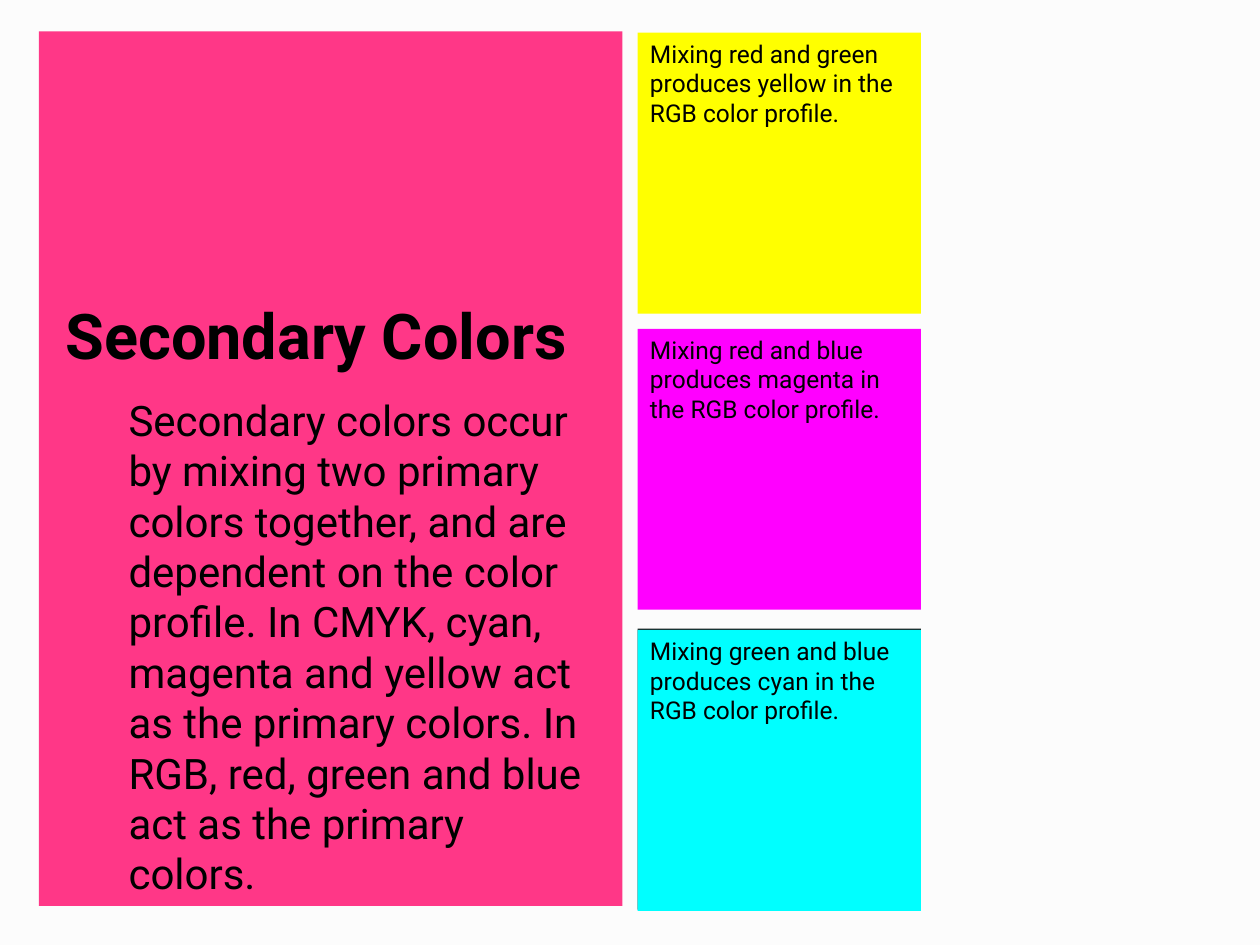
from pptx import Presentation
from pptx.dml.color import RGBColor
from pptx.enum.shapes import MSO_SHAPE
from pptx.enum.text import MSO_ANCHOR, MSO_AUTO_SIZE, PP_ALIGN
from pptx.oxml.ns import qn
from pptx.util import Inches, Pt
from lxml import etree

RECTANGLE = MSO_SHAPE.RECTANGLE
TOP, BOTTOM = MSO_ANCHOR.TOP, MSO_ANCHOR.BOTTOM
NO_AUTOFIT = MSO_AUTO_SIZE.NONE
LEFT = PP_ALIGN.LEFT

THEME = {
    "font": "Roboto", "title": 36, "body": 24, "caption": 14,
    "text": "000000", "background": "FCFCFC", "panel": "FF3787", "edge": "191919",
    "yellow": "FFFF00", "magenta": "FF00FF", "cyan": "00FFFF",
}

# One column of square tiles stands to the right of the panel.
TILE_LEFT, TILE_WIDTH, TILE_HEIGHT = 5.06, 2.25, 2.23
COPY_LEFT, COPY_WIDTH = 0.42, 4.39


def write(holder, text, size, bold=False, anchor=TOP):
    frame = holder.text_frame
    frame.text = text
    frame.word_wrap = True
    frame.auto_size = NO_AUTOFIT
    frame.vertical_anchor = anchor
    paragraph = frame.paragraphs[0]
    paragraph.alignment = LEFT
    paragraph.space_before = Pt(0)
    font = paragraph.runs[0].font
    font.name, font.size, font.bold = THEME["font"], Pt(THEME[size]), bold
    font.color.rgb = RGBColor.from_string(THEME["text"])
    return paragraph


def add_block(left, top, width, height, color):
    block = slide.shapes.add_shape(
        RECTANGLE, Inches(left), Inches(top), Inches(width), Inches(height))
    block.shadow.inherit = False
    block.fill.solid()
    block.fill.fore_color.rgb = RGBColor.from_string(THEME[color])
    block.line.fill.background()
    return block


prs = Presentation()
prs.slide_width, prs.slide_height = Inches(10), Inches(7.5)
slide = prs.slides.add_slide(prs.slide_layouts[1])
slide.background.fill.solid()
slide.background.fill.fore_color.rgb = RGBColor.from_string(THEME["background"])

# The panel goes behind the title and body placeholders.
panel = add_block(0.31, 0.25, 4.63, 6.94, "panel")
slide.shapes.element.insert(2, panel.element)

title = slide.shapes.title
title.left, title.top = Inches(COPY_LEFT), Inches(1.73)
title.width, title.height = Inches(COPY_WIDTH), Inches(1.27)
write(title, "Secondary Colors", "title", bold=True, anchor=BOTTOM)

body = slide.placeholders[1]
body.left, body.top = Inches(COPY_LEFT), Inches(3.08)
body.width, body.height = Inches(COPY_WIDTH), Inches(2.62)
definition = write(
    body,
    "Secondary colors occur by mixing two primary colors together, and are "
    "dependent on the color profile. In CMYK, cyan, magenta and yellow act as "
    "the primary colors. In RGB, red, green and blue act as the primary colors.",
    "body")
definition.level = 1
indent = definition._p.get_or_add_pPr()
indent.set("marL", str(Inches(0.5)))
indent.set("indent", "0")
etree.SubElement(indent, qn("a:buNone"))

# A dark square shows as a thin edge above the cyan tile.
add_block(TILE_LEFT, 4.99, TILE_WIDTH, TILE_HEIGHT, "edge")

mixtures = [
    (0.26, "yellow", "Mixing red and green produces yellow in the RGB color profile."),
    (2.61, "magenta", "Mixing red and blue produces magenta in the RGB color profile."),
    (5.0, "cyan", "Mixing green and blue produces cyan in the RGB color profile."),
]
for top, color, caption in mixtures:
    tile = add_block(TILE_LEFT, top, TILE_WIDTH, TILE_HEIGHT, color)
    write(tile, caption, "caption")

prs.save("out.pptx")
